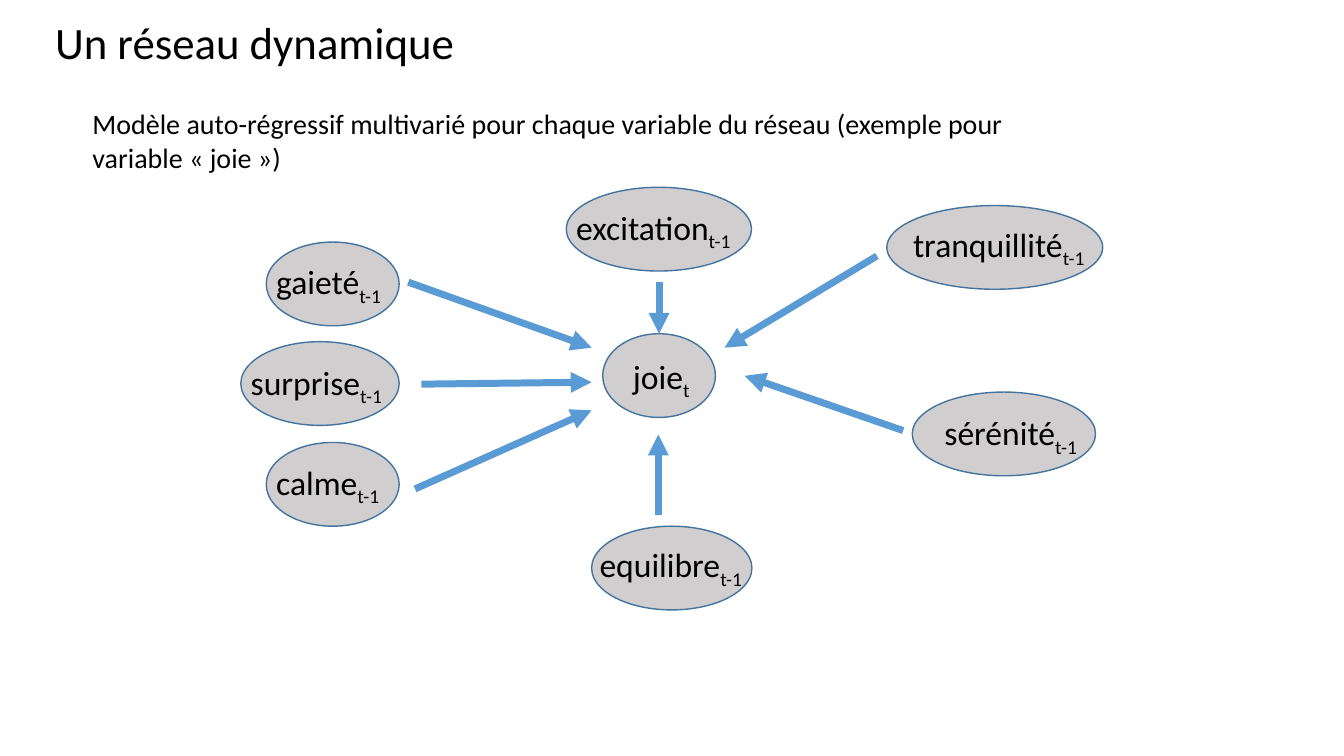
"""Build the slide of the dynamic emotion network around the variable joie."""
import pptx
import pptx.dml.color
import pptx.enum.shapes
import pptx.enum.text
import pptx.oxml.ns
import pptx.util
from lxml import etree

Cm = pptx.util.Cm
RGBColor = pptx.dml.color.RGBColor

BLACK = RGBColor(0x00, 0x00, 0x00)
NODE_FILL = RGBColor(0xD0, 0xCE, 0xCE)
NODE_LINE = RGBColor(0x43, 0x73, 0x9E)
ARROW_BLUE = RGBColor(0x5B, 0x9B, 0xD5)
FONT = "Calibri"
NODE_HEIGHT = 2.11
LABEL_HEIGHT = 1.27

# Word, time index, ellipse left, top, width, label offset right, down, label width
TARGET = ("joie", "t", 15.19, 8.41, 2.84, 0.51, 0.43, 3.07)
SOURCES = [
    ("excitation", "t-1", 14.27, 4.72, 4.67, 0, 0.36, 4.67),
    ("gaieté", "t-1", 6.71, 6.1, 3.35, 0, 0.36, 3.35),
    ("surprise", "t-1", 6.07, 8.61, 3.99, 0, 0.38, 3.99),
    ("calme", "t-1", 6.71, 11.15, 3.35, 0, 0.36, 3.35),
    ("equilibre", "t-1", 14.91, 13.26, 4.04, -0.05, 0.33, 4.42),
    ("sérénité", "t-1", 22.99, 9.88, 4.62, 0.56, 0.38, 4.11),
    ("tranquillité", "t-1", 22.35, 5.18, 5.44, 0.41, 0.33, 5.03),
]
ARROWS = [
    (10.29, 7.11, 14.91, 8.76),
    (10.62, 9.68, 14.91, 9.63),
    (10.46, 12.32, 14.91, 10.34),
    (16.59, 12.98, 16.59, 10.95),
    (22.1, 6.45, 18.26, 8.76),
    (22.76, 10.85, 18.77, 9.47),
]


def add_text(page, left, top, width, height, size, text, subscript=None):
    """Add a wrapped text box with an optional subscript run."""
    box = page.shapes.add_textbox(Cm(left), Cm(top), Cm(width), Cm(height))
    box.text_frame.word_wrap = True
    box.text_frame.auto_size = pptx.enum.text.MSO_AUTO_SIZE.SHAPE_TO_FIT_TEXT
    para = box.text_frame.paragraphs[0]
    for content in filter(None, (text, subscript)):
        span = para.add_run()
        span.text = content
        span.font.name = FONT
        span.font.size = pptx.util.Pt(size)
        span.font.color.rgb = BLACK
    if subscript:
        span.font._element.set("baseline", "-25000")


def add_node(page, word, index, left, top, width, right, down, label_width):
    """Add a labelled ellipse for one variable and return the ellipse."""
    ellipse = page.shapes.add_shape(
        pptx.enum.shapes.MSO_SHAPE.OVAL,
        Cm(left), Cm(top), Cm(width), Cm(NODE_HEIGHT))
    ellipse.shadow.inherit = False
    ellipse.fill.solid()
    ellipse.fill.fore_color.rgb = NODE_FILL
    ellipse.line.color.rgb = NODE_LINE
    ellipse.line.width = pptx.util.Pt(1)
    add_text(page, left + right, top + down, label_width, LABEL_HEIGHT,
             24, word, index)
    return ellipse


def add_arrow(page, start_x, start_y, end_x, end_y):
    """Add a thick straight arrow and return it."""
    arrow = page.shapes.add_connector(
        pptx.enum.shapes.MSO_CONNECTOR.STRAIGHT,
        Cm(start_x), Cm(start_y), Cm(end_x), Cm(end_y))
    arrow.line.color.rgb = ARROW_BLUE
    arrow.line.width = pptx.util.Pt(5)
    qn = pptx.oxml.ns.qn
    etree.SubElement(arrow.line._get_or_add_ln(), qn("a:tailEnd"), type="triangle")
    etree.SubElement(arrow._element.spPr, qn("a:effectLst"))
    return arrow


def main():
    """Build the page and save the deck."""
    deck = pptx.Presentation()
    deck.slide_width, deck.slide_height = Cm(33.87), Cm(19.05)
    page = deck.slides.add_slide(deck.slide_layouts[6])
    add_text(page, 1.14, 0.25, 12.4, 1.63, 32, "Un réseau dynamique")
    add_text(page, 2.08, 2.57, 25.7, 1.96, 20,
             "Modèle auto-régressif multivarié pour chaque variable du réseau "
             "(exemple pour variable « joie »)")
    target = add_node(page, *TARGET)
    for source in SOURCES:
        add_node(page, *source)
    add_arrow(page, 16.61, 7.11, 16.61, 8.41).end_connect(target, 0)
    for arrow in ARROWS:
        add_arrow(page, *arrow)
    deck.save("out.pptx")


if __name__ == "__main__":
    main()
